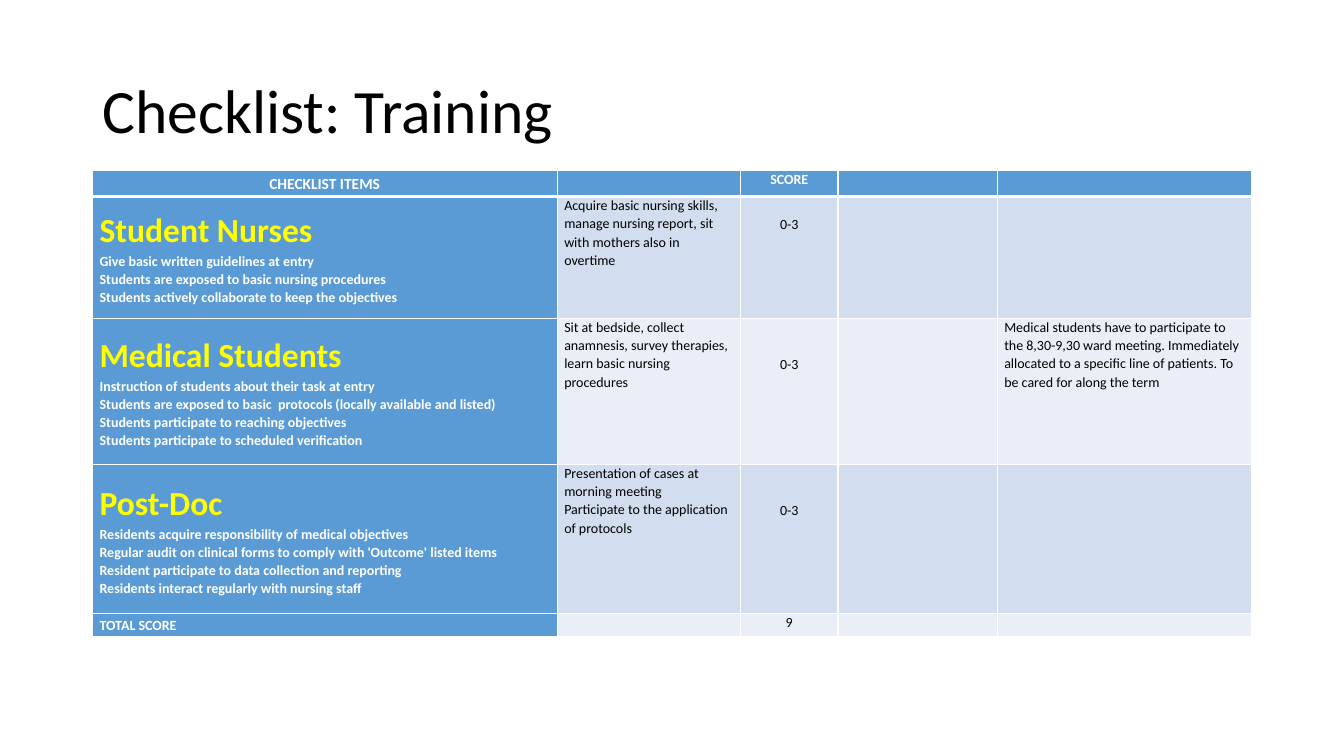
import pptx
import pptx.util
import pptx.dml.color
import pptx.enum.text
import pptx.oxml.ns
import lxml.etree

Cm, Pt = pptx.util.Cm, pptx.util.Pt
RGBColor = pptx.dml.color.RGBColor
ALIGN = pptx.enum.text.PP_ALIGN
ANCHOR = pptx.enum.text.MSO_ANCHOR
qn = pptx.oxml.ns.qn

BLACK = RGBColor(0x00, 0x00, 0x00)
WHITE = RGBColor(0xFF, 0xFF, 0xFF)
YELLOW = RGBColor(0xFF, 0xFF, 0x00)
BLUE = RGBColor(0x5B, 0x9B, 0xD5)
BAND_DARK = RGBColor(0xD2, 0xDE, 0xEF)
BAND_LIGHT = RGBColor(0xEA, 0xEF, 0xF7)

TITLE = dict(name="Calibri", size=Pt(44), bold=False, color=BLACK)
COLUMN_HEAD = dict(name="Calibri", size=Pt(11), bold=True, color=WHITE)
ITEM = dict(COLUMN_HEAD, size=Pt(10))
GROUP = dict(COLUMN_HEAD, size=Pt(24), color=YELLOW)
BODY = dict(name="Calibri", size=Pt(10), bold=False, color=BLACK)

COLUMN_WIDTHS = (11.71, 4.62, 2.46, 4.01, 6.41)
ROW_HEIGHTS = (0.66, 3.07, 3.68, 3.76, 0.59)
TEXT_LINE = 0.46  # height of one line of body text, in cm

# Group, its items, notes, lines left free above the score, remark
GROUPS = (
    ("Student Nurses",
     ("Give basic written guidelines at entry",
      "Students are exposed to basic nursing procedures",
      "Students actively collaborate to keep the objectives"),
     ("Acquire basic nursing skills, manage nursing report, sit with mothers also in overtime",),
     1, ()),
    ("Medical Students",
     ("Instruction of students about their task at entry",
      "Students are exposed to basic  protocols (locally available and listed)",
      "Students participate to reaching objectives",
      "Students participate to scheduled verification"),
     ("Sit at bedside, collect anamnesis, survey therapies, learn basic nursing procedures",),
     2,
     ("Medical students have to participate to the 8,30-9,30 ward meeting. Immediately "
      "allocated to a specific line of patients. To be cared for along the term",)),
    ("Post-Doc",
     ("Residents acquire responsibility of medical objectives",
      "Regular audit on clinical forms to comply with 'Outcome' listed items",
      "Resident participate to data collection and reporting",
      "Residents interact regularly with nursing staff"),
     ("Presentation of cases at morning meeting",
      "Participate to the application of protocols"),
     2, ()),
)


def set_font(font, style):
    for attribute, value in style.items():
        if attribute == "color":
            font.color.rgb = value
        else:
            setattr(font, attribute, value)


def add_title(slide, wording):
    title = slide.shapes.title
    place = dict(left=Cm(2.33), top=Cm(1.02), width=Cm(29.21), height=Cm(3.68))
    for attribute, value in place.items():
        setattr(title, attribute, value)
    frame = title.text_frame
    frame.text = wording
    frame.auto_size = pptx.enum.text.MSO_AUTO_SIZE.NONE
    frame.vertical_anchor = ANCHOR.MIDDLE
    paragraph = frame.paragraphs[0]
    paragraph.alignment = ALIGN.LEFT
    paragraph.line_spacing = 0.9
    set_font(paragraph.runs[0].font, TITLE)


def draw_borders(cell, top, bottom):
    properties = cell._tc.get_or_add_tcPr()
    for side, points in (("L", 1), ("R", 1), ("T", top), ("B", bottom)):
        line = lxml.etree.SubElement(properties, qn("a:ln" + side), w=str(Pt(points)))
        fill = lxml.etree.SubElement(line, qn("a:solidFill"))
        lxml.etree.SubElement(fill, qn("a:srgbClr"), val=str(WHITE))


def fill_cell(cell, lines, color, align=ALIGN.LEFT, anchor=ANCHOR.TOP, lines_above=0):
    """Write (wording, style) lines into a cell."""
    layout = dict(margin_left=Cm(0.18), margin_right=Cm(0.18), margin_bottom=0,
                  margin_top=Cm(TEXT_LINE * lines_above), vertical_anchor=anchor)
    for attribute, value in layout.items():
        setattr(cell, attribute, value)
    cell.fill.solid()
    cell.fill.fore_color.rgb = color
    frame = cell.text_frame
    for number, (wording, style) in enumerate(lines):
        paragraph = frame.add_paragraph() if number else frame.paragraphs[0]
        paragraph.alignment = align
        paragraph.line_spacing = 1.07
        run = paragraph.add_run()
        run.text = wording
        set_font(run.font, style)
    if not lines:  # a small end mark keeps the row from growing
        lxml.etree.SubElement(frame.paragraphs[0]._p, qn("a:endParaRPr"), sz="1000")


def body(*wordings):
    return [(wording, BODY) for wording in wordings]


def add_checklist(slide):
    checklist = slide.shapes.add_table(
        len(ROW_HEIGHTS), len(COLUMN_WIDTHS), Cm(2.33), Cm(4.29),
        Cm(sum(COLUMN_WIDTHS)), Cm(sum(ROW_HEIGHTS))).table
    for column, width in zip(checklist.columns, COLUMN_WIDTHS):
        column.width = Cm(width)
    for row, height in zip(checklist.rows, ROW_HEIGHTS):
        row.height = Cm(height)
    for number, row in enumerate(checklist.rows):
        for cell in row.cells:
            draw_borders(cell, 3 if number == 1 else 1, 3 if number == 0 else 1)

    # Column heads
    heads = ([("CHECKLIST ITEMS", COLUMN_HEAD)], [], [("SCORE", ITEM)], [], [])
    for column, lines in enumerate(heads):
        fill_cell(checklist.cell(0, column), lines, BLUE, ALIGN.CENTER,
                  ANCHOR.TOP if column else ANCHOR.MIDDLE)

    # Groups, then the total
    rows = [([(group, GROUP)] + [(item, ITEM) for item in items],
             body(*notes), body("0-3"), lines_above, body(*remark))
            for group, items, notes, lines_above, remark in GROUPS]
    rows.append(([("TOTAL SCORE", ITEM)], [], body("9"), 0, []))
    for number, (items, notes, score, lines_above, remark) in enumerate(rows, start=1):
        band = BAND_DARK if number % 2 else BAND_LIGHT
        fill_cell(checklist.cell(number, 0), items, BLUE, anchor=ANCHOR.MIDDLE)
        fill_cell(checklist.cell(number, 1), notes, band)
        fill_cell(checklist.cell(number, 2), score, band, ALIGN.CENTER, lines_above=lines_above)
        fill_cell(checklist.cell(number, 3), [], band)
        fill_cell(checklist.cell(number, 4), remark, band)


def main():
    presentation = pptx.Presentation()
    presentation.slide_width = Cm(33.87)
    presentation.slide_height = Cm(19.05)
    slide = presentation.slides.add_slide(presentation.slide_layouts[5])
    add_title(slide, "Checklist: Training")
    add_checklist(slide)
    presentation.save("out.pptx")


if __name__ == "__main__":
    main()
